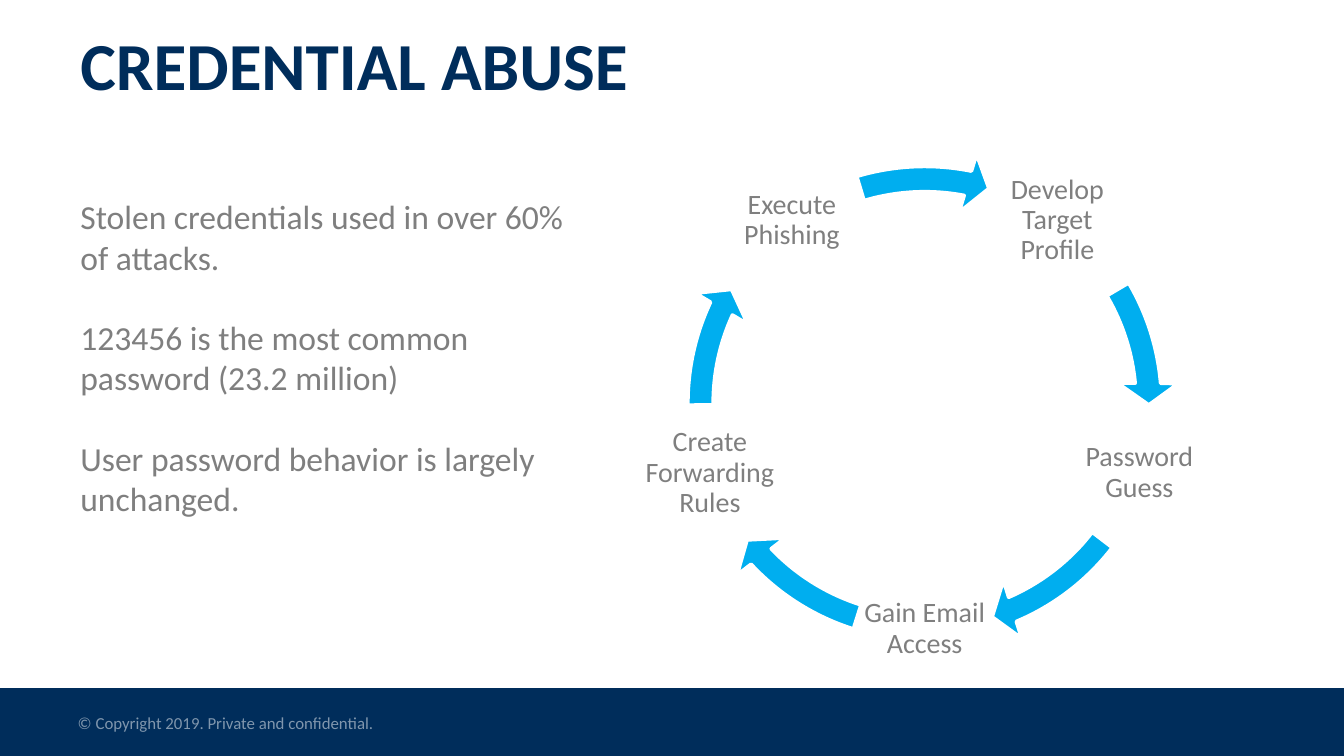
from math import cos, radians, sin

from pptx import Presentation
from pptx.dml.color import RGBColor
from pptx.enum.shapes import MSO_SHAPE
from pptx.enum.text import MSO_ANCHOR, PP_ALIGN
from pptx.util import Inches, Pt

RECTANGLE = MSO_SHAPE.RECTANGLE
CIRCULAR_ARROW = MSO_SHAPE.CIRCULAR_ARROW
TOP, MIDDLE = MSO_ANCHOR.TOP, MSO_ANCHOR.MIDDLE
LEFT, CENTER = PP_ALIGN.LEFT, PP_ALIGN.CENTER

NAVY = RGBColor(0x00, 0x2D, 0x5B)
CYAN = RGBColor(0x00, 0xAE, 0xEF)
GRAY = RGBColor(0x7F, 0x7F, 0x7F)
PALE_BLUE = RGBColor(0x80, 0x96, 0xAD)
WHITE = RGBColor(0xFF, 0xFF, 0xFF)

TITLE = "CREDENTIAL ABUSE"
FOOTER = "© Copyright 2019. Private and confidential."
FACTS = [
    "Stolen credentials used in over 60% of attacks.",
    "123456 is the most common password (23.2 million)",
    "User password behavior is largely unchanged.",
]
STEPS = [
    {"label": "Develop Target Profile", "arrow_start": 329.45, "arrow_end": 354.88},
    {"label": "Password Guess", "arrow_start": 37.57, "arrow_end": 66.9},
    {"label": "Gain Email Access", "arrow_start": 107.5, "arrow_end": 136.83},
    {"label": "Create Forwarding Rules", "arrow_start": 179.52, "arrow_end": 204.95},
    {"label": "Execute Phishing", "arrow_start": 253.32, "arrow_end": 281.08},
]

SLIDE_WIDTH = 10
SLIDE_HEIGHT = SLIDE_WIDTH * 9 / 16
FOOTER_TOP = 5.12
CENTER_X, CENTER_Y = 6.88, 3.0
LABEL_RADIUS, LABEL_SIZE = 1.68, 1.01
RING_SIZE = 3.79
FIRST_ANGLE = -54
ARROW_WIDTH, HEAD_WIDTH, HEAD_ANGLE = 0.05, 0.06, 5.6
ADJUSTMENT_PER_DEGREE = 0.6


def add_text(slide, texts, left, top, width, height, size, color, bold=False,
             align=LEFT, anchor=TOP, line_spacing=None, gap=0, inset=None):
    box = slide.shapes.add_textbox(Inches(left), Inches(top), Inches(width), Inches(height))
    frame = box.text_frame
    frame.word_wrap = True
    frame.vertical_anchor = anchor
    if inset is not None:
        frame.margin_left = frame.margin_right = Inches(inset)
        frame.margin_top = frame.margin_bottom = Inches(inset)
    for index, text in enumerate(texts):
        paragraph = frame.add_paragraph() if index else frame.paragraphs[0]
        paragraph.alignment = align
        if line_spacing:
            paragraph.line_spacing = line_spacing
        if index:
            paragraph.space_before = Pt(gap)
        run = paragraph.add_run()
        run.text = text
        run.font.name = "Calibri"
        run.font.size = Pt(size)
        run.font.bold = bold
        run.font.color.rgb = color


def add_filled_shape(slide, kind, left, top, width, height, color):
    shape = slide.shapes.add_shape(kind, Inches(left), Inches(top), Inches(width), Inches(height))
    shape.shadow.inherit = False
    shape.fill.solid()
    shape.fill.fore_color.rgb = color
    shape.line.fill.background()
    return shape


def add_cycle(slide):
    for index, step in enumerate(STEPS):
        angle = radians(FIRST_ANGLE + index * 360 / len(STEPS))
        label_left = CENTER_X + LABEL_RADIUS * cos(angle) - LABEL_SIZE / 2
        label_top = CENTER_Y + LABEL_RADIUS * sin(angle) - LABEL_SIZE / 2
        add_text(slide, [step["label"]], label_left, label_top, LABEL_SIZE, LABEL_SIZE,
                 size=15, color=GRAY, align=CENTER, anchor=MIDDLE,
                 line_spacing=0.9, inset=0.02)
        arrow = add_filled_shape(slide, CIRCULAR_ARROW, CENTER_X - RING_SIZE / 2,
                                 CENTER_Y - RING_SIZE / 2, RING_SIZE, RING_SIZE, CYAN)
        arrow.line.color.rgb = WHITE
        arrow.line.width = Pt(2)
        angles = [degrees * ADJUSTMENT_PER_DEGREE
                  for degrees in (HEAD_ANGLE, step["arrow_end"], step["arrow_start"])]
        for position, value in enumerate([ARROW_WIDTH, *angles, HEAD_WIDTH]):
            arrow.adjustments[position] = value


def main():
    presentation = Presentation()
    presentation.slide_width = Inches(SLIDE_WIDTH)
    presentation.slide_height = Inches(SLIDE_HEIGHT)
    slide = presentation.slides.add_slide(presentation.slide_layouts[6])

    add_filled_shape(slide, RECTANGLE, 0, FOOTER_TOP, SLIDE_WIDTH,
                     SLIDE_HEIGHT - FOOTER_TOP, NAVY)
    add_text(slide, [FOOTER], 0.48, 5.25, 3.38, 0.25, size=9, color=PALE_BLUE)
    add_cycle(slide)
    add_text(slide, [TITLE], 0.5, 0.15, 9, 0.76, size=36, color=NAVY, bold=True,
             anchor=MIDDLE, line_spacing=0.8)
    add_text(slide, FACTS, 0.5, 1.41, 3.83, 2.52, size=18, color=GRAY, gap=21.6)
    presentation.save("out.pptx")


if __name__ == "__main__":
    main()
